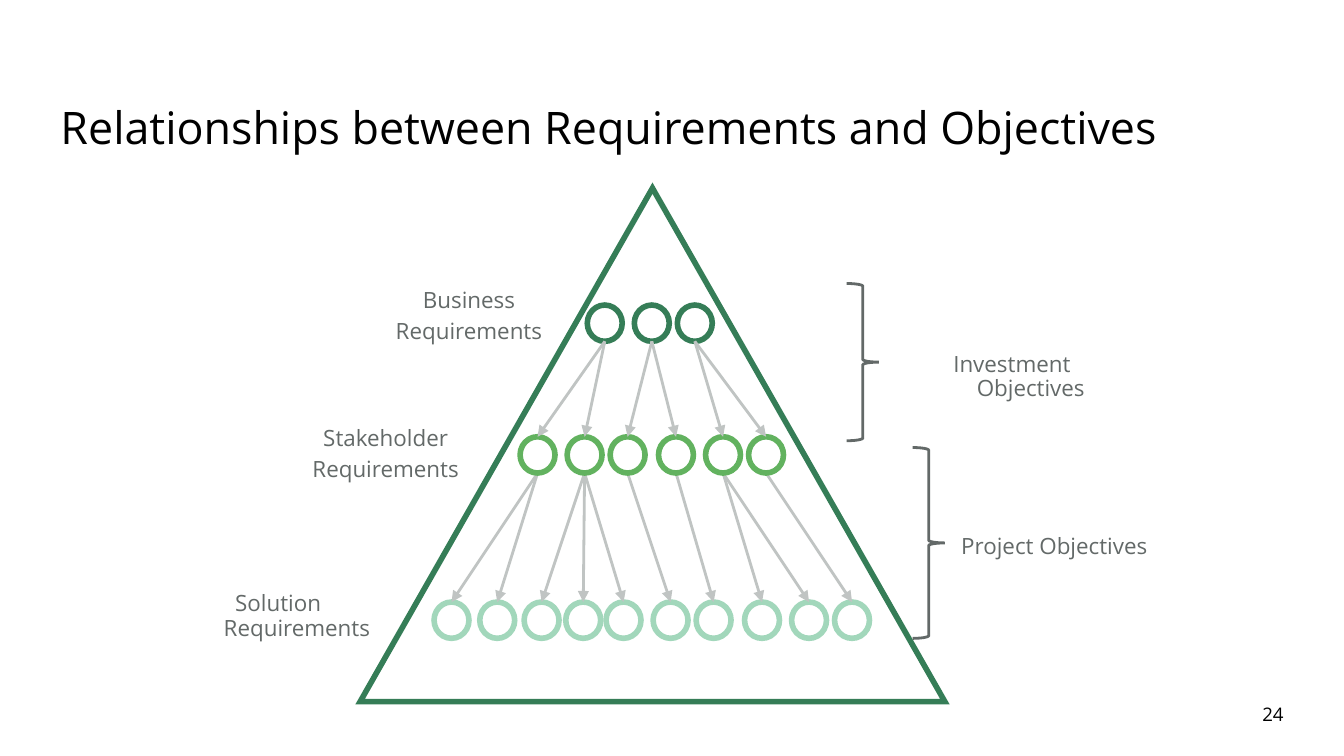
"""Build a slide that shows how requirement levels relate to objectives."""
from lxml import etree
from pptx import Presentation
from pptx import util as u
from pptx.dml.color import RGBColor
from pptx.enum import shapes, text
from pptx.oxml import ns

BLACK = RGBColor(0x00, 0x00, 0x00)
WHITE = RGBColor(0xFF, 0xFF, 0xFF)
GRAY = RGBColor(0x63, 0x69, 0x68)
ARROW_GRAY = RGBColor(0xC0, 0xC4, 0xC3)
DARK_GREEN = RGBColor(0x35, 0x7D, 0x57)
GREEN = RGBColor(0x62, 0xB2, 0x5F)
PALE_GREEN = RGBColor(0xA2, 0xD7, 0xBB)

CIRCLE_WIDTH, CIRCLE_HEIGHT = 0.26, 0.27
BUSINESS = [4.5, 4.85, 5.17]
STAKEHOLDER = [4, 4.35, 4.67, 5.03, 5.38, 5.7]
SOLUTION = [3.36, 3.7, 4.03, 4.34, 4.64, 4.99, 5.31, 5.67, 6.02, 6.34]
STAKEHOLDER_PARENTS = [0, 0, 1, 1, 2, 2]
SOLUTION_PARENTS = [0, 0, 1, 1, 1, 2, 3, 4, 4, 5]
BUSINESS_TOP, STAKEHOLDER_TOP, SOLUTION_TOP = 2.27, 3.25, 4.48


def format_paragraph(paragraph, content, size=12, color=GRAY, align=text.PP_ALIGN.CENTER,
                     hanging=0.28, before=0, font="Open Sans"):
    """Write content into a paragraph with the given format."""
    properties = paragraph._p.get_or_add_pPr()
    properties.set("marL", str(u.Inches(hanging)))
    properties.set("indent", str(-u.Inches(hanging)))
    paragraph.alignment = align
    paragraph.line_spacing = 0.9
    paragraph.space_before = u.Pt(before)
    run = paragraph.add_run()
    run.text = content
    run.font.name = font
    run.font.size = u.Pt(size)
    run.font.color.rgb = color


class SlideBuilder:
    """Hold the shared style and the current slide."""

    def __init__(self, slide, outline=3, thin_line=1.5):
        self.slide = slide
        self.outline = outline
        self.thin_line = thin_line

    def label(self, lines, left, top, width, height, inset=0.0, inset_right=None,
              anchor=text.MSO_ANCHOR.TOP, wrap=True, **style):
        """Add a text box with one paragraph for each line."""
        box = self.slide.shapes.add_textbox(*map(u.Inches, (left, top, width, height)))
        frame = box.text_frame
        frame.word_wrap = wrap
        frame.vertical_anchor = anchor
        frame.margin_left = frame.margin_top = frame.margin_bottom = u.Inches(inset)
        frame.margin_right = u.Inches(inset if inset_right is None else inset_right)
        for index, line in enumerate(lines):
            paragraph = frame.add_paragraph() if index else frame.paragraphs[0]
            format_paragraph(paragraph, line, before=3.6 if index else 0, **style)

    def outlined(self, kind, left, top, width, height, color, weight=None, fill=None):
        """Add a preset shape with a coloured, sharp-cornered outline."""
        shape = self.slide.shapes.add_shape(kind, *map(u.Inches, (left, top, width, height)))
        shape.shadow.inherit = False
        if fill is None:
            shape.fill.background()
        else:
            shape.fill.solid()
            shape.fill.fore_color.rgb = fill
        shape.line.color.rgb = color
        shape.line.width = u.Pt(weight or self.outline)
        etree.SubElement(shape.line._get_or_add_ln(), ns.qn("a:miter"), lim="800000")

    def circles(self, centers, top, color):
        """Add a row of circles around the given centres."""
        for center in centers:
            self.outlined(shapes.MSO_SHAPE.OVAL, center - CIRCLE_WIDTH / 2, top,
                          CIRCLE_WIDTH, CIRCLE_HEIGHT, color)

    def brace(self, left, top, height):
        """Add a right brace."""
        self.outlined(shapes.MSO_SHAPE.RIGHT_BRACE, left, top, 0.24, height, GRAY,
                      weight=self.thin_line, fill=WHITE)

    def arrow(self, start_x, start_y, end_x, end_y):
        """Add a straight arrow."""
        connector = self.slide.shapes.add_connector(
            shapes.MSO_CONNECTOR.STRAIGHT, *map(u.Inches, (start_x, start_y, end_x, end_y)))
        connector.line.color.rgb = ARROW_GRAY
        connector.line.width = u.Pt(self.thin_line)
        line = connector.line._get_or_add_ln()
        etree.SubElement(line, ns.qn("a:tailEnd"), type="triangle")
        etree.SubElement(connector._element.spPr, ns.qn("a:effectLst"))

    def links(self, parents, parent_top, children, child_top, parent_of):
        """Add an arrow from each child's parent to the child."""
        for child, index in zip(children, parent_of):
            self.arrow(parents[index], parent_top + CIRCLE_HEIGHT, child, child_top)


def main():
    """Build and save the presentation."""
    presentation = Presentation()
    presentation.slide_width = u.Inches(10)
    presentation.slide_height = presentation.slide_width * 9 // 16
    slide = presentation.slides.add_slide(presentation.slide_layouts[6])
    builder = SlideBuilder(slide)
    middle = text.MSO_ANCHOR.MIDDLE

    builder.label(["24"], 9.38, 5.25, 0.28, 0.15, inset_right=0.11, size=10, color=BLACK,
                  align=text.PP_ALIGN.RIGHT, hanging=0)
    builder.label(["Relationships between Requirements and Objectives"], 0.45, 0.65, 9.2, 0.63,
                  anchor=middle, size=24, color=BLACK, align=text.PP_ALIGN.LEFT, hanging=0)

    builder.outlined(shapes.MSO_SHAPE.ISOSCELES_TRIANGLE, 2.68, 1.4, 4.35, 3.82, DARK_GREEN)
    builder.circles(SOLUTION, SOLUTION_TOP, PALE_GREEN)
    builder.links(STAKEHOLDER, STAKEHOLDER_TOP, SOLUTION, SOLUTION_TOP, SOLUTION_PARENTS)
    builder.circles(BUSINESS, BUSINESS_TOP, DARK_GREEN)
    builder.circles(STAKEHOLDER, STAKEHOLDER_TOP, GREEN)
    builder.links(BUSINESS, BUSINESS_TOP, STAKEHOLDER, STAKEHOLDER_TOP, STAKEHOLDER_PARENTS)

    builder.label(["Business", "Requirements"], 2.64, 2.11, 1.7, 0.49, inset=0.03, anchor=middle)
    builder.label(["Stakeholder", "Requirements"], 1.93, 3.15, 1.88, 0.49, inset=0.03)
    builder.label(["Solution Requirements"], 1.3, 4.38, 1.54, 0.43, inset=0.03)

    builder.brace(6.3, 2.11, 1.17)
    builder.label(["Investment Objectives"], 6.82, 2.63, 1.64, 0.18, inset_right=0.22)
    builder.brace(6.79, 3.33, 1.42)
    builder.label(["Project Objectives"], 7.14, 3.98, 1.41, 0.18, wrap=False)

    presentation.save("out.pptx")


if __name__ == "__main__":
    main()
